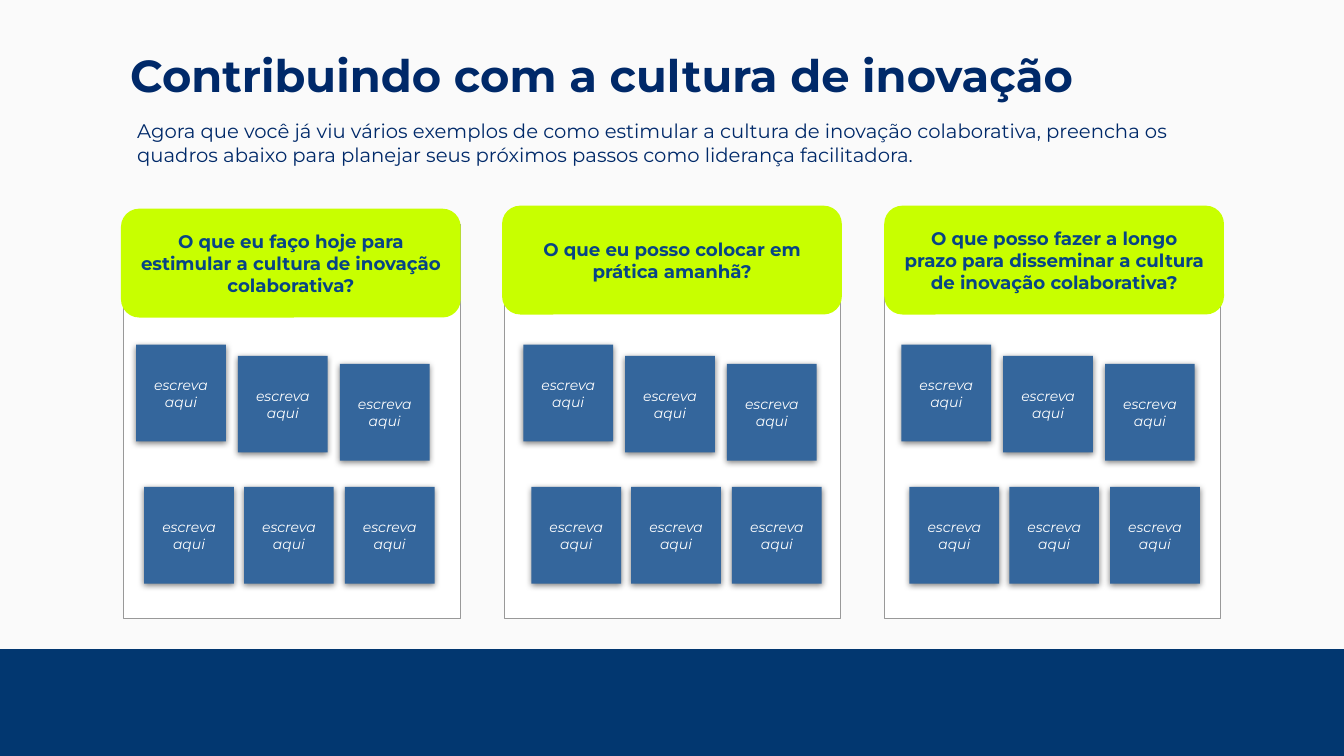
from lxml.etree import SubElement
from pptx import Presentation
from pptx.dml.color import RGBColor
from pptx.enum.shapes import MSO_SHAPE
from pptx.enum.text import MSO_ANCHOR, MSO_AUTO_SIZE, PP_ALIGN
from pptx.oxml.ns import qn
from pptx.util import Inches, Pt

NAVY = "002969"
COLUMNS = [
    # panel left, header left, header top, first note left, question
    (1.23, 1.2, 2.07, 1.35,
     "O que eu faço hoje para estimular a cultura de inovação colaborativa?"),
    (5, 4.98, 2.04, 5.19,
     "O que eu posso colocar em prática amanhã?"),
    (8.77, 8.77, 2.04, 8.94,
     "O que posso fazer a longo prazo para disseminar a cultura de inovação colaborativa?"),
]
NOTE_TOP = 3.42
NOTE_OFFSETS = [(0, 0), (1.01, 0.11), (2.02, 0.19),
                (0.08, 1.41), (1.07, 1.41), (2.07, 1.41)]


def colour(hex_string):
    return RGBColor.from_string(hex_string)


def write(shape, words, size, hex_string, inset=0.13, bold=False, italic=False,
          align=PP_ALIGN.CENTER, anchor=MSO_ANCHOR.MIDDLE):
    frame = shape.text_frame
    frame.text = words
    frame.word_wrap = True
    frame.auto_size = MSO_AUTO_SIZE.NONE
    frame.vertical_anchor = anchor
    frame.margin_left = frame.margin_right = Inches(inset)
    frame.margin_top = frame.margin_bottom = Inches(inset)
    paragraph = frame.paragraphs[0]
    paragraph.alignment = align
    font = paragraph.runs[0].font
    font.name, font.size = "Montserrat", Pt(size)
    font.bold, font.italic = bold, italic
    font.color.rgb = colour(hex_string)
    return paragraph


def place(shape, left, top, width, height):
    shape.left, shape.top = Inches(left), Inches(top)
    shape.width, shape.height = Inches(width), Inches(height)


def add_block(slide, left, top, width, height, fill, line=None, preset=MSO_SHAPE.RECTANGLE):
    block = slide.shapes.add_shape(preset, Inches(left), Inches(top),
                                   Inches(width), Inches(height))
    block.shadow.inherit = False
    block.fill.solid()
    block.fill.fore_color.rgb = colour(fill)
    if line:
        block.line.color.rgb = colour(line)
        block.line.width = Pt(0.75)
    else:
        block.line.fill.background()
    return block


def add_soft_shadow(shape):
    effects = shape._element.spPr.find(qn("a:effectLst"))
    shadow = SubElement(effects, qn("a:outerShdw"), blurRad=str(Pt(4.5)), dist=str(Pt(1.5)),
                        dir="5400000", algn="bl", rotWithShape="0")
    black = SubElement(shadow, qn("a:srgbClr"), val="000000")
    SubElement(black, qn("a:alpha"), val="50000")


def add_heading(slide):
    title, intro = slide.shapes.title, slide.placeholders[1]
    place(title, 1.1, 0.28, 11.57, 1.08)
    write(title, "Contribuindo com a cultura de inovação", 32, NAVY, inset=0.19,
          bold=True, align=PP_ALIGN.LEFT, anchor=MSO_ANCHOR.TOP)
    place(intro, 1.23, 1.05, 10.56, 0.74)
    paragraph = write(
        intro,
        "Agora que você já viu vários exemplos de como estimular a cultura de inovação "
        "colaborativa, preencha os quadros abaixo para planejar seus próximos passos como "
        "liderança facilitadora.",
        14, NAVY, align=PP_ALIGN.LEFT, anchor=MSO_ANCHOR.TOP)
    properties = paragraph._p.get_or_add_pPr()
    properties.set("marL", "0")
    properties.set("indent", "0")
    SubElement(properties, qn("a:buNone"))
    paragraph.space_before = Pt(0)
    paragraph.space_after = Pt(15)


def add_header(slide, left, top, question):
    header = add_block(slide, left, top, 3.37, 1.08, "C8FF00",
                       preset=MSO_SHAPE.ROUNDED_RECTANGLE)
    header.adjustments[0] = 0.167
    write(header, question, 13, "074485", bold=True)


def add_note(slide, left, top):
    note = add_block(slide, left, top, 0.89, 0.96, "34669C")
    add_soft_shadow(note)
    write(note, "escreva aqui", 10, "FFFFFF", italic=True)


def main():
    deck = Presentation()
    deck.slide_width, deck.slide_height = Inches(13.33), Inches(7.5)
    slide = deck.slides.add_slide(deck.slide_layouts[1])
    slide.background.fill.solid()
    slide.background.fill.fore_color.rgb = colour("FAFAFA")

    add_heading(slide)
    add_block(slide, 0, 6.44, 13.33, 1.06, "023770")
    for panel_left, header_left, header_top, notes_left, question in COLUMNS:
        add_block(slide, panel_left, 2.23, 3.34, 3.91, "FFFFFF", line="999999")
        add_header(slide, header_left, header_top, question)
        for across, down in NOTE_OFFSETS:
            add_note(slide, notes_left + across, NOTE_TOP + down)
    deck.save("out.pptx")


if __name__ == "__main__":
    main()
